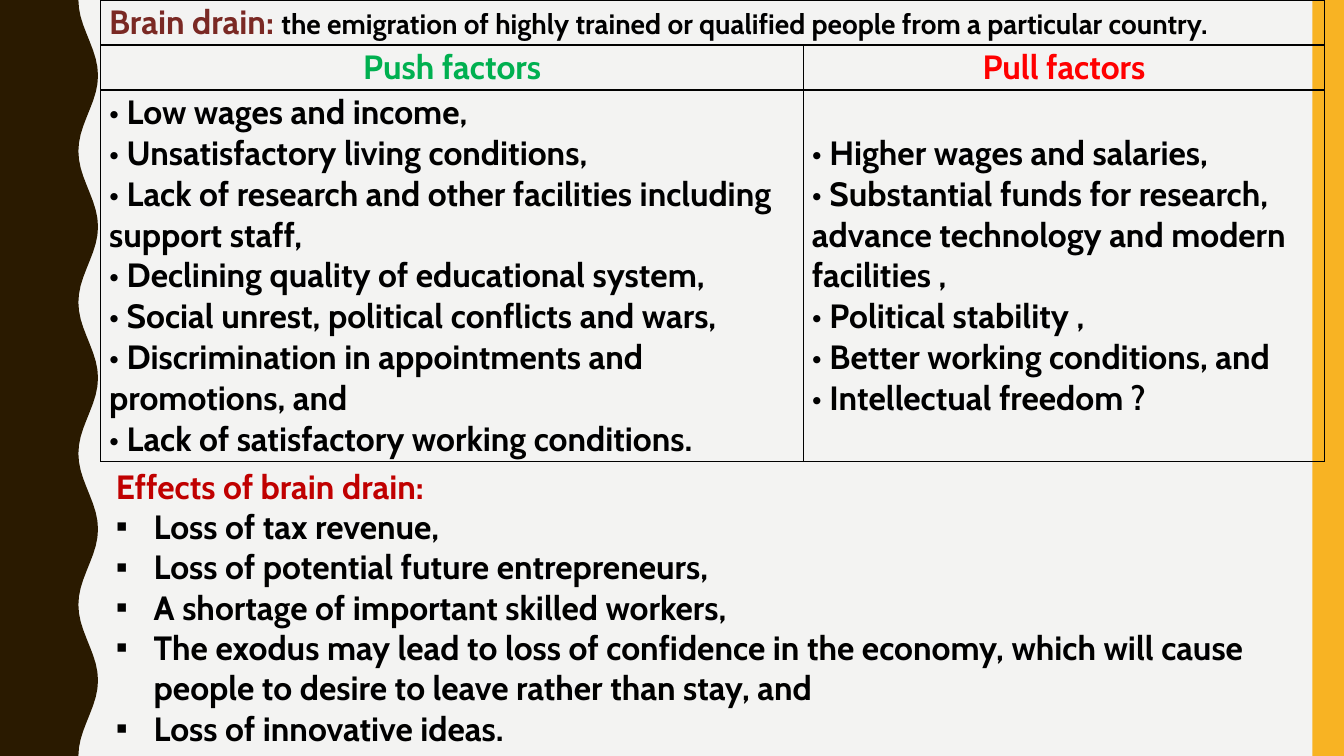
import math
from dataclasses import dataclass

import pptx
import pptx.dml.color
import pptx.enum.shapes
import pptx.enum.text
import pptx.oxml
import pptx.oxml.ns
import pptx.util
from lxml import etree

Pt = pptx.util.Pt
Align = pptx.enum.text.PP_ALIGN
Anchor = pptx.enum.text.MSO_ANCHOR


@dataclass(frozen=True)
class Theme:
    font: str = "Cabin"
    size: int = 24
    small: int = 20
    paper: str = "F3F3F2"
    wave: str = "2A1A00"
    stripe: str = "F8B323"
    ink: str = "000000"
    term: str = "7A2924"
    push: str = "00B050"
    pull: str = "FF0000"
    effects: str = "C00000"


theme = Theme()


def style(font, color, size=theme.size):
    font.name = theme.font
    font.bold = True
    font.size = Pt(size)
    font.color.rgb = pptx.dml.color.RGBColor.from_string(color)


def paint(shape, color):
    shape.fill.solid()
    shape.fill.fore_color.rgb = pptx.dml.color.RGBColor.from_string(color)
    shape.line.fill.background()
    shape.shadow.inherit = False


deck = pptx.Presentation()
deck.slide_width = Pt(960)
deck.slide_height = Pt(540)
page = deck.slides.add_slide(deck.slide_layouts[1])
page.background.fill.solid()
page.background.fill.fore_color.rgb = pptx.dml.color.RGBColor.from_string(theme.paper)
title = page.shapes.title.element
title.getparent().remove(title)

wave_middle, wave_depth, wave_period, wave_step = 63, 7, 108, 6
edge = [
    (Pt(wave_middle - wave_depth * math.cos(2 * math.pi * y / wave_period)), Pt(y))
    for y in range(0, 541, wave_step)
]
builder = page.shapes.build_freeform(0, 0)
builder.add_line_segments(edge + [(0, Pt(540))], close=True)
paint(builder.convert_to_shape(), theme.wave)

stripe = page.shapes.add_shape(
    pptx.enum.shapes.MSO_SHAPE.RECTANGLE, Pt(937.5), 0, Pt(22.5), Pt(540)
)
paint(stripe, theme.stripe)

push_factors = [
    "• Low wages and income,",
    "• Unsatisfactory living conditions,",
    "• Lack of research and other facilities including support staff,",
    "• Declining quality of educational system,",
    "• Social unrest, political conflicts and wars,",
    "• Discrimination in appointments and promotions, and",
    "• Lack of satisfactory working conditions.",
]
pull_factors = [
    "• Higher wages and salaries,",
    "• Substantial funds for research, advance technology and modern facilities ,",
    "• Political stability ,",
    "• Better working conditions, and",
    "• Intellectual freedom ?",
]
columns = [
    ("Push factors", theme.push, push_factors, 502),
    ("Pull factors", theme.pull, pull_factors, 372),
]

table = page.shapes.add_table(3, 2, Pt(72), 0, Pt(874), Pt(329.5)).table
table.first_row = False
table.horz_banding = False
for row, height in zip(table.rows, (32, 32, 265.5)):
    row.height = Pt(height)

for cell in table.iter_cells():
    cell.margin_left = cell.margin_right = Pt(6)
    cell.margin_top = cell.margin_bottom = Pt(1.5)
    cell.vertical_anchor = Anchor.MIDDLE
    properties = cell._tc.get_or_add_tcPr()
    for side in ("lnL", "lnR", "lnT", "lnB"):
        properties.append(pptx.oxml.parse_xml(
            f'<a:{side} xmlns:a="http://schemas.openxmlformats.org/drawingml/2006/main" '
            f'w="{Pt(1)}"><a:solidFill><a:srgbClr val="{theme.ink}"/></a:solidFill></a:{side}>'
        ))
    cell.fill.background()

table.cell(0, 0).merge(table.cell(0, 1))
definition = table.cell(0, 0).text_frame.paragraphs[0]
for words, color, size in (
    ("Brain drain: ", theme.term, theme.size),
    ("the emigration of highly trained or qualified people from a particular country.",
     theme.ink, theme.small),
):
    span = definition.add_run()
    span.text = words
    style(span.font, color, size)

for index, (heading, color, factors, width) in enumerate(columns):
    table.columns[index].width = Pt(width)
    para = table.cell(1, index).text_frame.paragraphs[0]
    para.text = heading
    para.alignment = Align.CENTER
    style(para.font, color)
    para = table.cell(2, index).text_frame.paragraphs[0]
    para.text = "\v".join(factors)
    style(para.font, theme.ink)

effects = [
    "Effects of brain drain:",
    "Loss of tax revenue,",
    "Loss of potential future entrepreneurs,",
    "A shortage of important skilled workers,",
    "The exodus may lead to loss of confidence in the economy, which will cause "
    "people to desire to leave rather than stay, and",
    "Loss of innovative ideas.",
]
box = page.placeholders[1]
box.left, box.top, box.width, box.height = Pt(75.6), Pt(329), Pt(840), Pt(211)
frame = box.text_frame
frame.word_wrap = True
frame.auto_size = pptx.enum.text.MSO_AUTO_SIZE.NONE
frame.vertical_anchor = Anchor.TOP
frame.text = "\n".join(effects)
for index, para in enumerate(frame.paragraphs):
    properties = para._p.get_or_add_pPr()
    indent = Pt(27) if index else 0
    properties.set("marL", str(indent))
    properties.set("indent", str(-indent))
    if index:
        etree.SubElement(properties, pptx.oxml.ns.qn("a:buFont"), typeface="Arial")
        etree.SubElement(properties, pptx.oxml.ns.qn("a:buChar"), char="▪")
    else:
        etree.SubElement(properties, pptx.oxml.ns.qn("a:buNone"))
    para.space_before = Pt(0)
    style(para.font, theme.ink if index else theme.effects)

deck.save("out.pptx")
